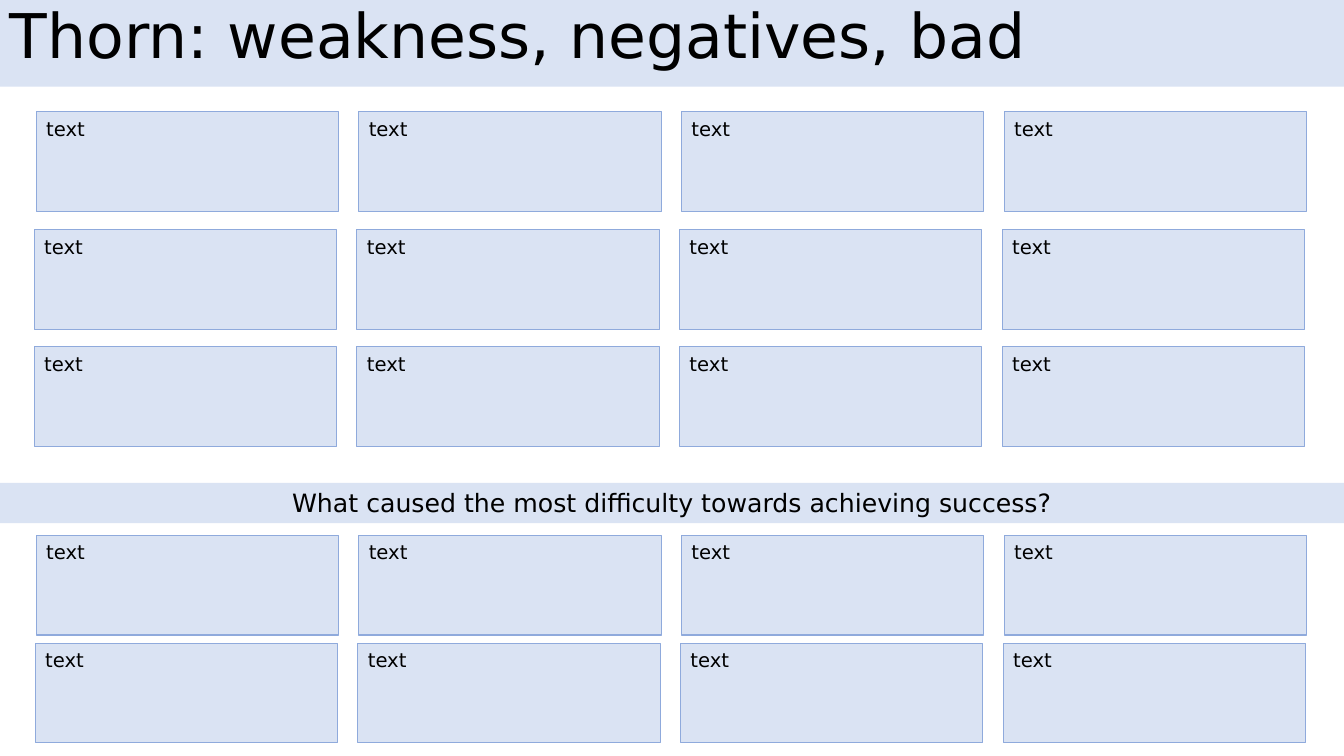
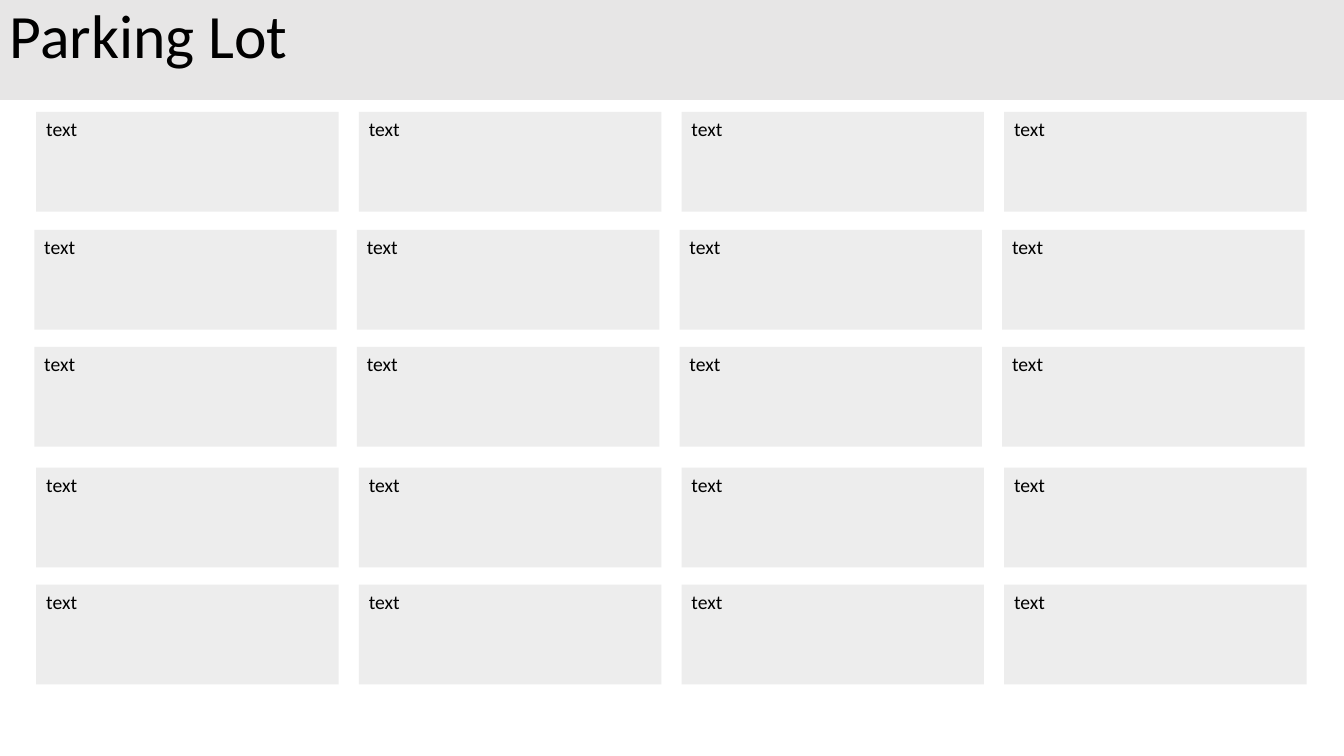
from dataclasses import dataclass

from pptx import Presentation
from pptx.dml.color import RGBColor as Color
from pptx.enum.shapes import MSO_SHAPE as Shape
from pptx.enum.text import MSO_ANCHOR as Anchor, PP_ALIGN as Align
from pptx.util import Inches, Pt

# Content: each row of notes is (left, top, texts)
NOTES = ["text"] * 4
UPPER_ROWS = [(0.36, 1.11, NOTES), (0.34, 2.28, NOTES), (0.34, 3.44, NOTES)]
PAGES = [
    {
        "palette": "thorn",
        "title": "Thorn: weakness, negatives, bad",
        "title_height": 0.86,
        "question": "What caused the most difficulty towards achieving success?",
        "rows": UPPER_ROWS + [(0.36, 5.31, NOTES), (0.35, 6.38, NOTES)],
    },
    {
        "palette": "parking",
        "title": "Parking Lot",
        "title_height": 0.99,
        "question": None,
        "rows": UPPER_ROWS + [(0.36, 4.64, NOTES), (0.36, 5.8, NOTES)],
    },
]


@dataclass(frozen=True)
class Palette:
    font: str
    band: str
    note: str
    outline: str | None = None


class Theme:
    ink = "000000"
    title_size, question_size, note_size = 44, 18, 14
    title_spacing = 0.9
    outline_width = 0.75
    palettes = {
        "thorn": Palette("DejaVu Sans", "DAE3F3", "DAE3F3", "8FAADC"),
        "parking": Palette("Calibri", "E7E6E6", "EDEDED"),
    }


# Grid, in inches
WIDTH, HEIGHT = 13.33, 7.5
NOTE_WIDTH, NOTE_HEIGHT, GAP = 3, 0.99, 0.2
QUESTION_TOP, QUESTION_HEIGHT = 4.79, 0.4


def add_text_box(page, text, area, *, font, size, fill, outline=None,
                 align=Align.LEFT, spacing=None):
    """Add a filled rectangle with text starting at its top."""
    box = page.shapes.add_shape(Shape.RECTANGLE, *map(Inches, area))
    box.shadow.inherit = False
    box.fill.solid()
    box.fill.fore_color.rgb = Color.from_string(fill)
    if outline:
        box.line.color.rgb = Color.from_string(outline)
        box.line.width = Pt(Theme.outline_width)
    else:
        box.line.fill.background()
    frame = box.text_frame
    frame.word_wrap = True
    frame.vertical_anchor = Anchor.TOP
    para = frame.paragraphs[0]
    para.alignment = align
    para.line_spacing = spacing
    span = para.add_run()
    span.text = text
    span.font.name = font
    span.font.size = Pt(size)
    span.font.color.rgb = Color.from_string(Theme.ink)
    return box


def add_page(deck, content):
    page = deck.slides.add_slide(deck.slide_layouts[6])
    palette = Theme.palettes[content["palette"]]

    # Title band
    add_text_box(page, content["title"], (0, 0, WIDTH, content["title_height"]),
                 font=palette.font, size=Theme.title_size, fill=palette.band,
                 spacing=Theme.title_spacing)

    # Question band
    if content["question"]:
        add_text_box(page, content["question"],
                     (0, QUESTION_TOP, WIDTH, QUESTION_HEIGHT),
                     font=palette.font, size=Theme.question_size,
                     fill=palette.band, align=Align.CENTER)

    # Notes
    for left, top, texts in content["rows"]:
        for column, text in enumerate(texts):
            x = left + column * (NOTE_WIDTH + GAP)
            add_text_box(page, text, (x, top, NOTE_WIDTH, NOTE_HEIGHT),
                         font=palette.font, size=Theme.note_size,
                         fill=palette.note, outline=palette.outline)


def main():
    deck = Presentation()
    deck.slide_width, deck.slide_height = Inches(WIDTH), Inches(HEIGHT)
    for content in PAGES:
        add_page(deck, content)
    deck.save("out.pptx")


if __name__ == "__main__":
    main()
